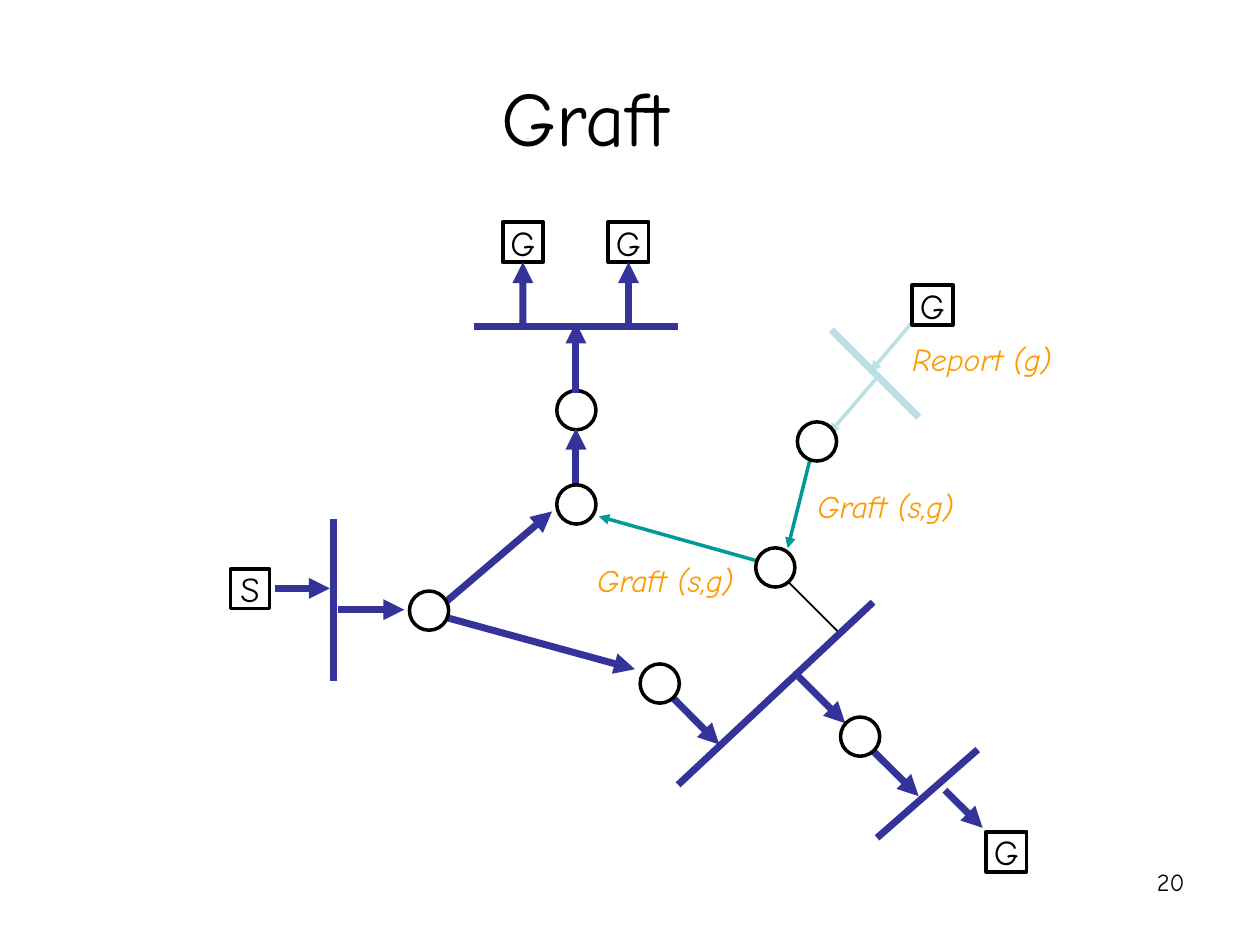
from lxml import etree
from pptx import Presentation
from pptx import util as u
from pptx.dml.color import RGBColor
from pptx.enum import shapes, text
from pptx.oxml import ns

FONT = "Comic Neue"
BLACK, WHITE, NAVY, TEAL, PALE, ORANGE = (
    "000000", "FFFFFF", "333399", "009999", "BBE0E3", "FF9900")

# Points are in cm, relative to the network's box.
SUBNETS = [
    ((5.55, 2.58), (9.67, 2.58), NAVY),
    ((2.73, 6.46), (2.73, 9.72), NAVY),
    ((13.6, 8.14), (9.67, 11.82), NAVY),
    ((15.71, 11.11), (13.68, 12.89), NAVY),
    ((12.76, 2.65), (14.52, 4.41), PALE),
]
DATA_FLOWS = [
    ((1.54, 7.86), (2.65, 7.86)),
    ((2.81, 8.29), (4.15, 8.29)),
    ((4.71, 8.37), (7.13, 6.31)),
    ((4.71, 8.37), (8.8, 9.49)),
    ((7.61, 5.83), (7.61, 4.64)),
    ((7.61, 3.92), (7.61, 2.5)),
    ((9.34, 9.84), (10.5, 11.01)),
    ((12.1, 9.64), (13.04, 10.58)),
    ((13.37, 10.91), (14.52, 12.05)),
    ((15.05, 11.93), (15.81, 12.69)),
]
REQUESTS = [
    ((14.36, 2.53), (13.55, 3.49), PALE),
    ((13.7, 3.59), (12.71, 4.74), PALE),
    ((12.43, 4.86), (11.88, 7.05), TEAL),
    ((11.6, 7.4), (8.07, 6.41), TEAL),
]
TOP_ROUTER = (7.62, 4.27)
ROUTERS = [(7.62, 6.17), (4.65, 8.31), (11.63, 7.44),
           (12.47, 4.9), (9.3, 9.78), (13.34, 10.85)]
TOP_MEMBERS = [(6.54, 0.88), (8.67, 0.88)]
OTHER_MEMBERS = [(14.8, 2.15), (16.29, 13.17)]
SOURCE = (1.04, 7.87)
LABELS = [("Report (g)", 14.14, 2.73, 3.53),
          ("Graft (s,g)", 12.23, 5.7, 3.66),
          ("Graft (s,g)", 7.79, 7.18, 3.66)]


def rgb(value):
    return RGBColor.from_string(value)


def write(sp, words, align, anchor, wrap=True, **font):
    """Fill a shape's text frame; font holds size, italic and color."""
    tf = sp.text_frame
    tf.word_wrap = wrap
    tf.vertical_anchor = anchor
    p = tf.paragraphs[0]
    p.alignment = align
    r = p.add_run()
    r.text = words
    r.font.color.rgb = rgb(font.pop("color", BLACK))
    for name, value in {"name": FONT, **font}.items():
        setattr(r.font, name, value)


def add_text(s, box, words, align, anchor, **style):
    sp = s.shapes.add_textbox(*map(u.Cm, box))
    write(sp, words, align, anchor, **style)


def add_line(s, start, end, color, width, arrow=False):
    cx = s.shapes.add_connector(
        shapes.MSO_CONNECTOR.STRAIGHT, *map(u.Cm, start + end))
    cx.line.color.rgb = rgb(color)
    cx.line.width = u.Pt(width)
    if arrow:
        etree.SubElement(cx.line._get_or_add_ln(), ns.qn("a:tailEnd"), type="triangle")
    etree.SubElement(cx._element.spPr, ns.qn("a:effectLst"))
    return cx


def add_node(s, kind, center, size, width, fill=None, words=None):
    corner = [c - size / 2 for c in center]
    sp = s.shapes.add_shape(kind, *map(u.Cm, corner + [size, size]))
    sp.shadow.inherit = False
    if fill:
        sp.fill.solid()
        sp.fill.fore_color.rgb = rgb(fill)
    else:
        sp.fill.background()
    sp.line.color.rgb = rgb(BLACK)
    sp.line.width = u.Pt(width)
    if words:
        write(sp, words, text.PP_ALIGN.CENTER, text.MSO_ANCHOR.MIDDLE,
              wrap=False, size=u.Pt(20))
    return sp


def add_network(s, left, top):
    """Draw the multicast tree in a box that starts at left, top."""
    def at(point):
        return point[0] + left, point[1] + top

    def router(center):
        add_node(s, shapes.MSO_SHAPE.OVAL, at(center), 0.79, 2, WHITE)

    def member(center):
        return add_node(s, shapes.MSO_SHAPE.RECTANGLE, at(center), 0.81, 2.25, words="G")

    router(TOP_ROUTER)
    for start, end, color in REQUESTS:
        add_line(s, at(start), at(end), color, 2, arrow=True)
    add_line(s, at((11.62, 7.46)), at((12.89, 8.73)), BLACK, 1)
    for start, end, color in SUBNETS:
        add_line(s, at(start), at(end), color, 4)
    for start, end in DATA_FLOWS:
        add_line(s, at(start), at(end), NAVY, 4, arrow=True)
    for center in ROUTERS:
        router(center)
    for x, y in TOP_MEMBERS:
        square = member((x, y))
        flow = add_line(s, at((x, 2.65)), at((x, y + 0.4)), NAVY, 4, arrow=True)
        flow.end_connect(square, 2)
    for center in OTHER_MEMBERS:
        member(center)
    add_node(s, shapes.MSO_SHAPE.RECTANGLE, at(SOURCE), 0.79, 2, WHITE, "S")
    for words, x, y, width in LABELS:
        add_text(s, at((x, y)) + (width, 1.02), words, text.PP_ALIGN.LEFT,
                 text.MSO_ANCHOR.TOP, wrap=False, size=u.Pt(18),
                 italic=True, color=ORANGE)


def main():
    prs = Presentation()
    prs.slide_width, prs.slide_height = u.Cm(25.4), u.Cm(19.05)
    s = prs.slides.add_slide(prs.slide_layouts[6])
    add_text(s, (1.27, 1.17, 21.06, 2.34), "Graft", text.PP_ALIGN.CENTER,
             text.MSO_ANCHOR.MIDDLE, size=u.Pt(44))
    add_network(s, 4, 4)
    add_text(s, (18.21, 17.35, 5.92, 1.32), "20", text.PP_ALIGN.RIGHT,
             text.MSO_ANCHOR.TOP, size=u.Pt(14))
    prs.save("out.pptx")


if __name__ == "__main__":
    main()
